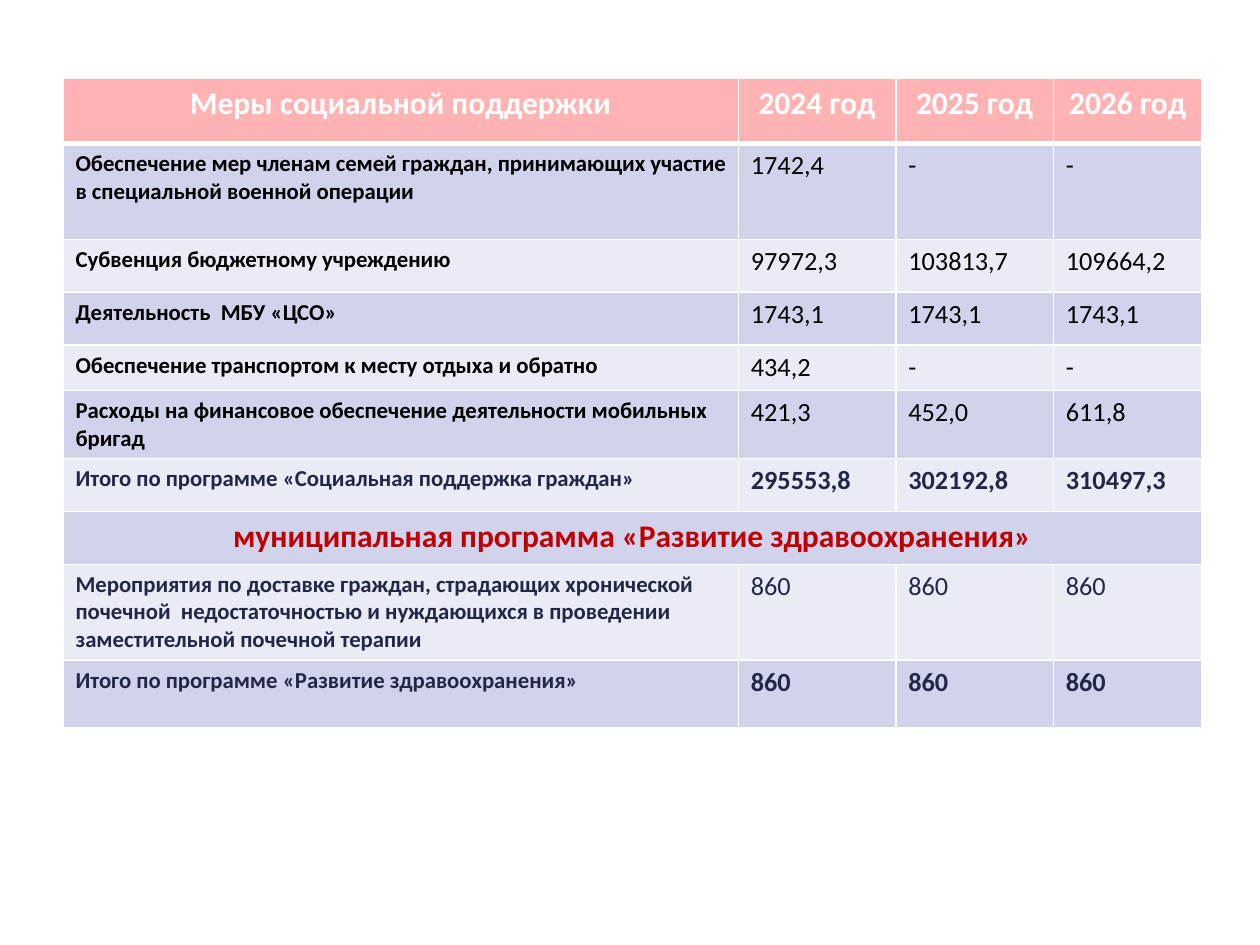
from dataclasses import dataclass

from lxml.etree import SubElement
from pptx import Presentation
from pptx.dml.color import RGBColor
from pptx.enum.text import PP_ALIGN
from pptx.oxml.ns import qn
from pptx.table import _Cell
from pptx.util import Inches, Pt

WHITE = RGBColor(0xFF, 0xFF, 0xFF)
BLACK = RGBColor(0x00, 0x00, 0x00)
NAVY = RGBColor(0x21, 0x27, 0x45)
RED = RGBColor(0xC0, 0x00, 0x00)
PINK = RGBColor(0xFF, 0xB3, 0xB3)
BAND_DARK = RGBColor(0xD0, 0xD3, 0xEB)
BAND_LIGHT = RGBColor(0xE9, 0xEB, 0xF5)

COLUMN_WIDTHS = (5.36, 1.25, 1.25, 1.18)
THIN, THICK = 1, 3


@dataclass
class BudgetRow:
    height: float
    label: str
    values: tuple[str, ...] = ()
    color: RGBColor = BLACK
    bold_values: bool = False
    heading: bool = False


ROWS = [
    BudgetRow(0.52, "Меры социальной поддержки", ("2024 год", "2025 год", "2026 год"),
              WHITE, bold_values=True, heading=True),
    BudgetRow(0.76, "Обеспечение мер членам семей граждан, принимающих участие "
              "в специальной военной операции", ("1742,4", "-", "-")),
    BudgetRow(0.42, "Субвенция бюджетному учреждению", ("97972,3", "103813,7", "109664,2")),
    BudgetRow(0.42, "Деятельность  МБУ «ЦСО»", ("1743,1", "1743,1", "1743,1")),
    BudgetRow(0.36, "Обеспечение транспортом к месту отдыха и обратно", ("434,2", "-", "-")),
    BudgetRow(0.54, "Расходы на финансовое обеспечение деятельности мобильных бригад",
              ("421,3", "452,0", "611,8")),
    BudgetRow(0.42, "Итого по программе «Социальная поддержка граждан»",
              ("295553,8", "302192,8", "310497,3"), NAVY, bold_values=True),
    BudgetRow(0.42, "муниципальная программа «Развитие здравоохранения»",
              color=RED, heading=True),
    BudgetRow(0.76, "Мероприятия по доставке граждан, страдающих хронической "
              "почечной  недостаточностью и нуждающихся в проведении "
              "заместительной почечной терапии", ("860", "860", "860"), NAVY),
    BudgetRow(0.54, "Итого по программе «Развитие здравоохранения»",
              ("860", "860", "860"), NAVY, bold_values=True),
]


def write(cell: _Cell, text: str, *, size: float, color: RGBColor,
          bold: bool = False, align: PP_ALIGN = PP_ALIGN.LEFT) -> None:
    paragraph = cell.text_frame.paragraphs[0]
    paragraph.alignment = align
    run = paragraph.add_run()
    run.text = text
    run.font.name = "Calibri"
    run.font.size = Pt(size)
    run.font.bold = bold
    run.font.color.rgb = color


def style_cell(cell: _Cell, fill: RGBColor, top: float, bottom: float) -> None:
    """Draw white borders, then the fill, in the order the schema asks for."""
    properties = cell._tc.get_or_add_tcPr()
    widths = {"a:lnL": THIN, "a:lnR": THIN, "a:lnT": top, "a:lnB": bottom}
    for tag, width in widths.items():
        line = SubElement(properties, qn(tag), w=str(Pt(width)))
        SubElement(SubElement(line, qn("a:solidFill")), qn("a:srgbClr"), val=str(WHITE))
    cell.fill.solid()
    cell.fill.fore_color.rgb = fill


def main() -> None:
    presentation = Presentation()
    presentation.slide_width, presentation.slide_height = Inches(10), Inches(7.5)
    slide = presentation.slides.add_slide(presentation.slide_layouts[6])
    table = slide.shapes.add_table(
        len(ROWS), len(COLUMN_WIDTHS), Inches(0.5), Inches(0.62),
        Inches(sum(COLUMN_WIDTHS)), Inches(sum(row.height for row in ROWS))).table
    for column, width in zip(table.columns, COLUMN_WIDTHS):
        column.width = Inches(width)

    for index, row in enumerate(ROWS):
        table.rows[index].height = Inches(row.height)
        fill = PINK if index == 0 else BAND_DARK if index % 2 else BAND_LIGHT
        cells = list(table.rows[index].cells)
        for cell in cells:
            style_cell(cell, fill, top=THICK if index == 1 else THIN,
                       bottom=THICK if index == 0 else THIN)
        if not row.values:
            cells[0].merge(cells[-1])
        align = PP_ALIGN.CENTER if row.heading else PP_ALIGN.LEFT
        write(cells[0], row.label, size=18 if row.heading else 13,
              color=row.color, bold=True, align=align)
        for cell, value in zip(cells[1:], row.values):
            write(cell, value, size=18 if row.heading else 15,
                  color=row.color, bold=row.bold_values, align=align)

    presentation.save("out.pptx")


if __name__ == "__main__":
    main()
